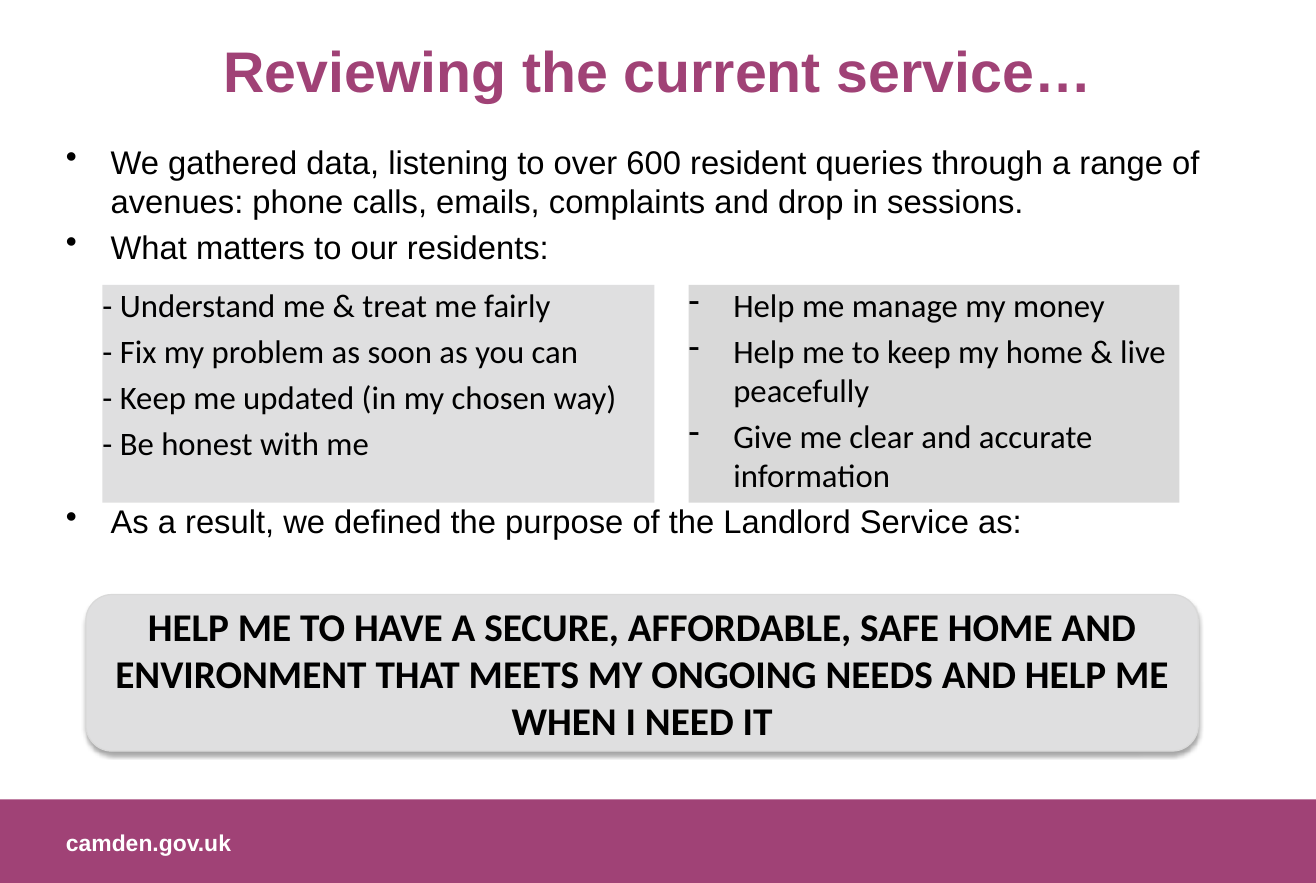
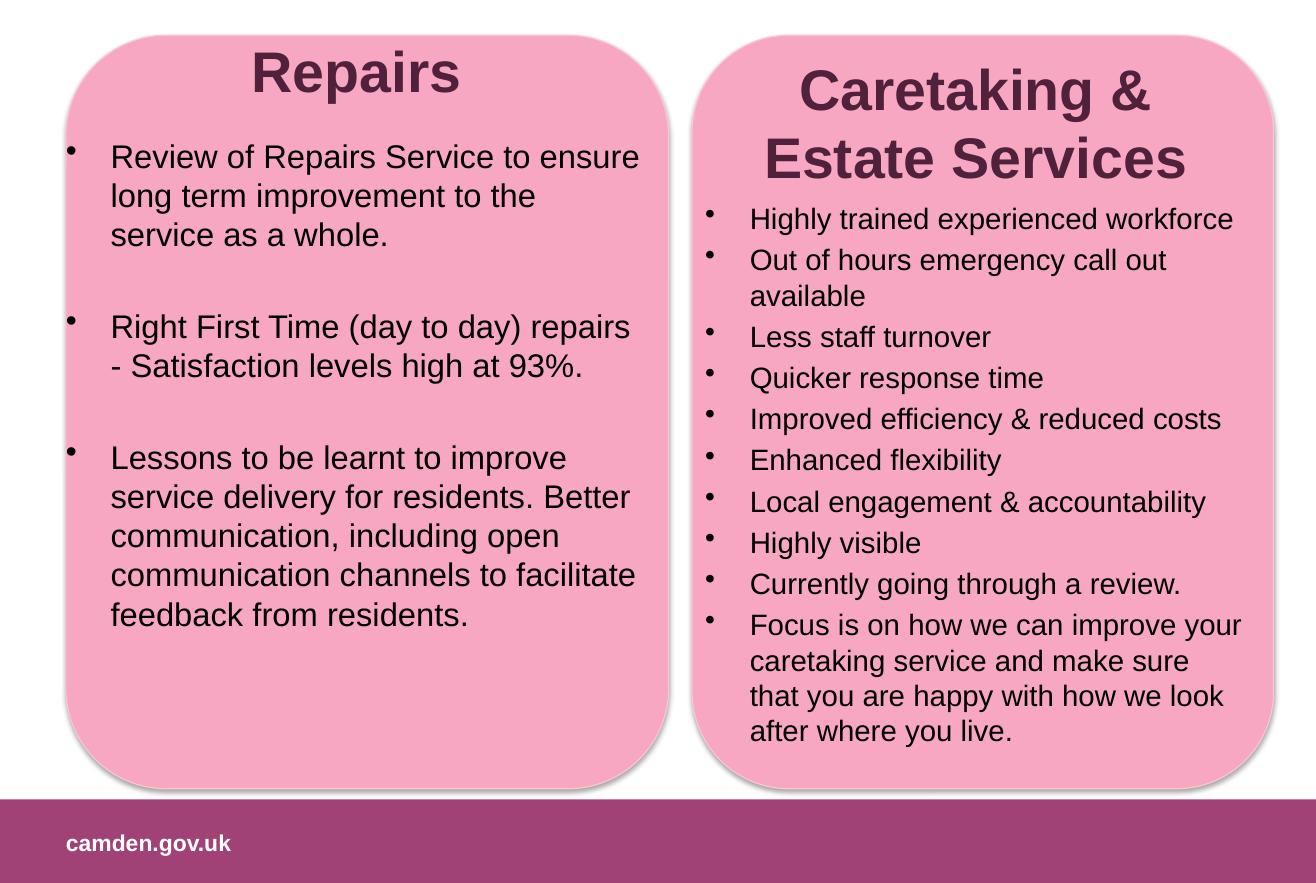
"""Build two slides on a housing service review."""
import dataclasses

import lxml.etree
import pptx
import pptx.dml.color
import pptx.enum.shapes
import pptx.enum.text
import pptx.oxml.ns
import pptx.util

Inches = pptx.util.Inches
Pt = pptx.util.Pt
RGBColor = pptx.dml.color.RGBColor
SHAPES = pptx.enum.shapes.MSO_SHAPE
ALIGN = pptx.enum.text.PP_ALIGN
ANCHOR = pptx.enum.text.MSO_ANCHOR
qn = pptx.oxml.ns.qn

PLUM = RGBColor(0xA0, 0x42, 0x76)
DARK_PLUM = RGBColor(0x50, 0x21, 0x3B)
PINK = RGBColor(0xF7, 0xA7, 0xC2)
PALE_PINK = RGBColor(0xF9, 0xC5, 0xD7)
LIGHT_GREY = RGBColor(0xDF, 0xDF, 0xE0)
GREY = RGBColor(0xD9, 0xD9, 0xD9)
BLACK = RGBColor(0, 0, 0)
WHITE = RGBColor(0xFF, 0xFF, 0xFF)

PAGE_WIDTH, PAGE_HEIGHT = 11.18, 7.5
MARGIN = 0.56
BAND_TOP = 6.79
INDENT = 0.38
SPACE_RATIO = 0.2

TITLE = {"name": "Arial", "size": Pt(35), "bold": True}
BODY = {"name": "Arial", "size": Pt(20), "bold": False}
SMALL_BODY = {**BODY, "size": Pt(18)}
QUOTE = {**BODY, "name": "Calibri"}
PURPOSE = {"name": "Calibri", "size": Pt(24), "bold": True}
FOOTER = {"name": "Arial", "size": Pt(14), "bold": True}


@dataclasses.dataclass
class Box:
    """A rectangle in inches."""

    left: float
    top: float
    width: float
    height: float

    def inside(self, left, top, width, height):
        """Return a rectangle placed from this one's top left corner."""
        return Box(self.left + left, self.top + top, width, height)

    def lengths(self):
        """Return the four lengths for python-pptx."""
        return [Inches(value) for value in dataclasses.astuple(self)]


def add_bullet(para, mark):
    """Give a paragraph a hanging bullet."""
    properties = para._p.get_or_add_pPr()
    properties.set("marL", str(Inches(INDENT)))
    properties.set("indent", str(-Inches(INDENT)))
    lxml.etree.SubElement(properties, qn("a:buChar"), char=mark)


def write(frame, texts, style, color, align=ALIGN.LEFT, mark=None, gaps=None):
    """Fill a text frame; gaps maps a paragraph number to extra points before it."""
    frame.word_wrap = True
    for number, text in enumerate(texts):
        para = frame.add_paragraph() if number else frame.paragraphs[0]
        if mark:
            add_bullet(para, mark)
        para.alignment = align
        if number:
            extra = (gaps or {}).get(number, 0)
            para.space_before = Pt(style["size"].pt * SPACE_RATIO + extra)
        span = para.add_run()
        span.text = text
        for name, value in style.items():
            setattr(span.font, name, value)
        span.font.color.rgb = color


def clear_margins(frame):
    """Set text at the top left of its frame with no insets."""
    frame.vertical_anchor = ANCHOR.TOP
    for side in ("left", "top", "right", "bottom"):
        setattr(frame, f"margin_{side}", 0)


def add_text(page, box, texts, style, color, **options):
    """Add a text box without insets."""
    frame = page.shapes.add_textbox(*box.lengths()).text_frame
    clear_margins(frame)
    write(frame, texts, style, color, **options)


def add_block(page, box, fill, kind=SHAPES.RECTANGLE):
    """Add a flat filled shape without an outline."""
    block = page.shapes.add_shape(kind, *box.lengths())
    block.shadow.inherit = False
    block.fill.solid()
    block.fill.fore_color.rgb = fill
    block.line.fill.background()
    return block


def add_card(page, box, fill, line):
    """Add a rounded card with a thin outline and a soft shadow."""
    card = add_block(page, box, fill, SHAPES.ROUNDED_RECTANGLE)
    card.line.color.rgb = line
    card.line.width = Pt(0.75)
    effects = card._element.spPr.find(qn("a:effectLst"))
    shadow = lxml.etree.SubElement(
        effects, qn("a:outerShdw"), blurRad=str(Pt(3.1)), dist=str(Pt(1.8)),
        dir="5400000", rotWithShape="0")
    tone = lxml.etree.SubElement(shadow, qn("a:srgbClr"), val=str(BLACK))
    lxml.etree.SubElement(tone, qn("a:alpha"), val="35000")
    return card


def add_title(page, box, text, color=PLUM):
    """Add a centred heading."""
    add_text(page, box, [text], TITLE, color, align=ALIGN.CENTER)


def add_quotes(page, box, fill, texts, mark=None):
    """Add a grey block of resident wishes."""
    frame = add_block(page, box, fill).text_frame
    clear_margins(frame)
    write(frame, texts, QUOTE, BLACK, mark=mark)


def add_purpose(page, box, text):
    """Add the card that states the purpose."""
    frame = add_card(page, box, LIGHT_GREY, GREY).text_frame
    frame.vertical_anchor = ANCHOR.MIDDLE
    write(frame, [text], PURPOSE, BLACK, align=ALIGN.CENTER)


def add_footer(page, box):
    """Add the footer band and its web address."""
    add_block(page, box, PLUM)
    add_text(page, box.inside(MARGIN, 0.25, 4.61, 0.24), ["camden.gov.uk"], FOOTER, WHITE)


def add_page(deck):
    """Add a blank slide with the shared footer."""
    page = deck.slides.add_slide(deck.slide_layouts[6])
    add_footer(page, Box(0, BAND_TOP, PAGE_WIDTH, PAGE_HEIGHT - BAND_TOP))
    return page


def add_review(page, box):
    """Place the review findings and the purpose."""
    add_title(page, box.inside(0, 0, 10.06, 1.01), "Reviewing the current service…")
    add_text(page, box.inside(0, 0.9, 10.2, 5.19), [
        "We gathered data, listening to over 600 resident queries through a range of "
        "avenues: phone calls, emails, complaints and drop in sessions.",
        "What matters to our residents:",
        "As a result, we defined the purpose of the Landlord Service as:",
    ], BODY, BLACK, mark="•", gaps={2: 140})
    add_purpose(
        page, box.inside(0.17, 4.75, 9.45, 1.33),
        "HELP ME TO HAVE A SECURE, AFFORDABLE, SAFE HOME AND ENVIRONMENT THAT MEETS "
        "MY ONGOING NEEDS AND HELP ME WHEN I NEED IT")
    add_quotes(page, box.inside(0.31, 2.12, 4.69, 1.85), LIGHT_GREY, [
        "- Understand me & treat me fairly",
        "- Fix my problem as soon as you can",
        "- Keep me updated (in my chosen way)",
        "- Be honest with me",
    ])
    add_quotes(page, box.inside(5.29, 2.12, 4.17, 1.85), GREY, [
        "Help me manage my money",
        "Help me to keep my home & live peacefully",
        "Give me clear and accurate information",
    ], mark="-")


def add_panel(page, box, heading, heading_at, texts, texts_at, style, gaps=None):
    """Add a pink card with a heading and a bulleted list."""
    add_card(page, box, PINK, PALE_PINK)
    add_title(page, box.inside(*heading_at, 4.22, 1.25), heading, DARK_PLUM)
    add_text(page, box.inside(*texts_at), texts, style, BLACK, mark="•", gaps=gaps)


def add_services(page, box):
    """Place the two service panels side by side."""
    add_panel(page, box.inside(0, 0, 5.12, 6.4), "Repairs", (0.36, 0), [
        "Review of Repairs Service to ensure long term improvement to the service as a whole.",
        "Right First Time (day to day) repairs - Satisfaction levels high at 93%.",
        "Lessons to be learnt to improve service delivery for residents. Better "
        "communication, including open communication channels to facilitate feedback "
        "from residents.",
    ], (0, 0.85, 4.94, 4.95), BODY, gaps={1: 28, 2: 28})
    add_panel(page, box.inside(5.32, 0, 4.94, 6.4), "Caretaking & Estate Services", (0.3, 0.15), [
        "Highly trained experienced workforce",
        "Out of hours emergency call out available",
        "Less staff turnover",
        "Quicker response time",
        "Improved efficiency & reduced costs",
        "Enhanced flexibility",
        "Local engagement & accountability",
        "Highly visible",
        "Currently going through a review.",
        "Focus is on how we can improve your caretaking service and make sure that you "
        "are happy with how we look after where you live.",
    ], (0.11, 1.4, 4.6, 4.63), SMALL_BODY)


def main():
    """Build and save the deck."""
    deck = pptx.Presentation()
    deck.slide_width = Inches(PAGE_WIDTH)
    deck.slide_height = Inches(PAGE_HEIGHT)
    content = Box(MARGIN, 0.3, 10.26, 6.4)
    for add_content in (add_review, add_services):
        add_content(add_page(deck), content)
    deck.save("out.pptx")


if __name__ == "__main__":
    main()
